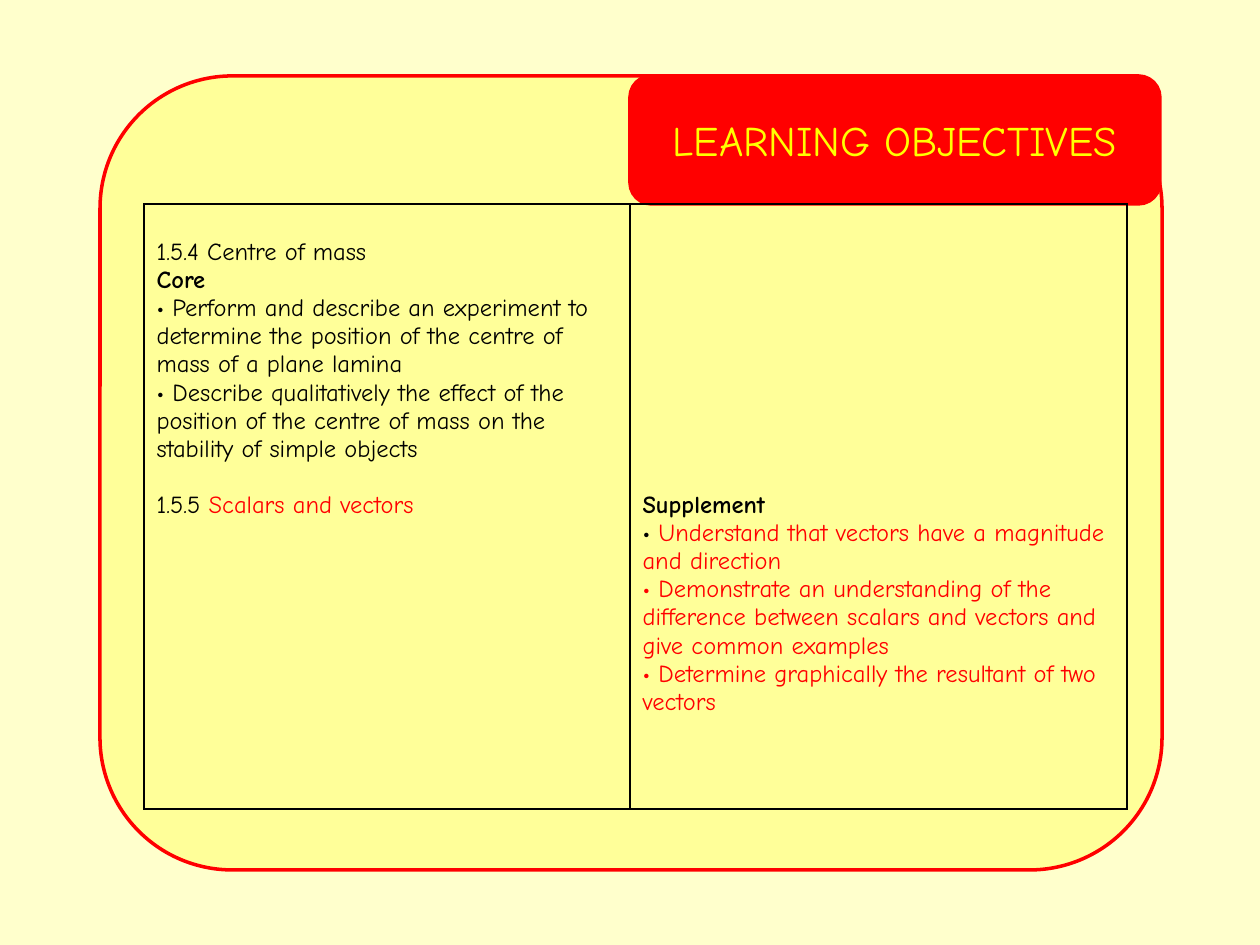
"""Build the learning objectives slide with a two-column syllabus table."""
from dataclasses import dataclass

from lxml import etree
from pptx import Presentation
from pptx.dml.color import RGBColor
from pptx.enum.shapes import MSO_SHAPE
from pptx.enum.text import MSO_ANCHOR, PP_ALIGN
from pptx.oxml.ns import qn
from pptx.util import Emu, Pt

RECTANGLE = MSO_SHAPE.RECTANGLE
ROUNDED = MSO_SHAPE.ROUNDED_RECTANGLE
MIDDLE = MSO_ANCHOR.MIDDLE
LEFT, CENTER = PP_ALIGN.LEFT, PP_ALIGN.CENTER


@dataclass(frozen=True)
class Theme:
    font: str = "Comic Neue"
    title_size: int = 24
    body_size: int = 14
    line_width: int = 2
    border_width: int = 1
    backdrop: str = "FFFFCC"
    panel: str = "FFFF99"
    red: str = "FF0000"
    yellow: str = "FFFF00"
    black: str = "000000"


THEME = Theme()
TITLE = "LEARNING OBJECTIVES"

CORE = [
    {"runs": [("1.5.4 Centre of mass", THEME.black)]},
    {"runs": [("Core", THEME.black)], "bold": True},
    {"runs": [("• Perform and describe an experiment to determine the position "
               "of the centre of mass of a plane lamina", THEME.black)]},
    {"runs": [("• Describe qualitatively the effect of the position of the "
               "centre of mass on the stability of simple objects", THEME.black)]},
    {"runs": [("1.5.5 ", THEME.black), ("Scalars and vectors", THEME.red)], "lines_before": 1},
]
SUPPLEMENT = [
    {"runs": [("Supplement", THEME.black)], "bold": True},
    {"runs": [("• ", THEME.black),
              ("Understand that vectors have a magnitude and direction", THEME.red)]},
    {"runs": [("• Demonstrate an understanding of the difference between "
               "scalars and vectors and give common examples", THEME.red)]},
    {"runs": [("• Determine graphically the resultant of two vectors", THEME.red)]},
]
COLUMNS = [
    {"width": 486, "lines_above": 1, "paragraphs": CORE},
    {"width": 497, "lines_above": 10, "paragraphs": SUPPLEMENT},
]

PX = 914400 // 126
SLIDE_SIZE = (1260, 945)
PANEL_BOX = (100, 76, 1062, 794)
TITLE_BOX = (630, 76, 530, 128)
TABLE_LEFT, TABLE_TOP, TABLE_HEIGHT = 144, 204, 605
CELL_MARGIN = 6
LINE_HEIGHT = Pt(16.07)


def px(value):
    """Turn pixels into EMU."""
    return Emu(round(value * 914400 / 126))


def add_box(slide, kind, box, fill, line=None):
    """Add a flat filled shape with an optional outline."""
    shape = slide.shapes.add_shape(kind, *map(px, box))
    shape.shadow.inherit = False
    shape.fill.solid()
    shape.fill.fore_color.rgb = RGBColor.from_string(fill)
    if line:
        shape.line.color.rgb = RGBColor.from_string(line)
        shape.line.width = Pt(THEME.line_width)
    else:
        shape.line.fill.background()
    return shape


def write_paragraph(paragraph, runs, size=THEME.body_size, bold=False,
                    align=LEFT, lines_before=0):
    """Write coloured runs into a paragraph."""
    paragraph.alignment = align
    if lines_before:
        paragraph.space_before = Emu(lines_before * LINE_HEIGHT)
    for text, color in runs:
        run = paragraph.add_run()
        run.text = text
        run.font.name = THEME.font
        run.font.size = Pt(size)
        run.font.bold = bold
        run.font.color.rgb = RGBColor.from_string(color)


def set_borders(cell):
    """Draw a solid line on all four sides of a cell."""
    properties = cell._tc.get_or_add_tcPr()
    for index, side in enumerate(("a:lnL", "a:lnR", "a:lnT", "a:lnB")):
        line = etree.Element(qn(side), w=str(Pt(THEME.border_width)))
        fill = etree.SubElement(line, qn("a:solidFill"))
        etree.SubElement(fill, qn("a:srgbClr"), val=THEME.black)
        properties.insert(index, line)


def add_objectives(slide):
    """Add the table, one column for each list of objectives."""
    width = sum(column["width"] for column in COLUMNS)
    frame = slide.shapes.add_table(1, len(COLUMNS), px(TABLE_LEFT), px(TABLE_TOP),
                                   px(width), px(TABLE_HEIGHT))
    table = frame.table
    table.first_row = False
    table.horz_banding = False
    table.rows[0].height = px(TABLE_HEIGHT)
    for index, column in enumerate(COLUMNS):
        table.columns[index].width = px(column["width"])
        cell = table.cell(0, index)
        cell.fill.background()
        set_borders(cell)
        cell.margin_top = Emu(px(CELL_MARGIN) + column["lines_above"] * LINE_HEIGHT)
        text_frame = cell.text_frame
        for number, content in enumerate(column["paragraphs"]):
            paragraph = text_frame.add_paragraph() if number else text_frame.paragraphs[0]
            write_paragraph(paragraph, **content)


def main():
    """Build and save the slide."""
    presentation = Presentation()
    presentation.slide_width, presentation.slide_height = map(px, SLIDE_SIZE)
    slide = presentation.slides.add_slide(presentation.slide_layouts[6])
    add_box(slide, RECTANGLE, (0, 0, *SLIDE_SIZE), THEME.backdrop)
    add_box(slide, ROUNDED, PANEL_BOX, THEME.panel, THEME.red)
    title = add_box(slide, ROUNDED, TITLE_BOX, THEME.red, THEME.red)
    title.text_frame.vertical_anchor = MIDDLE
    write_paragraph(title.text_frame.paragraphs[0], [(TITLE, THEME.yellow)],
                    size=THEME.title_size, align=CENTER)
    add_objectives(slide)
    presentation.save("out.pptx")


if __name__ == "__main__":
    main()
